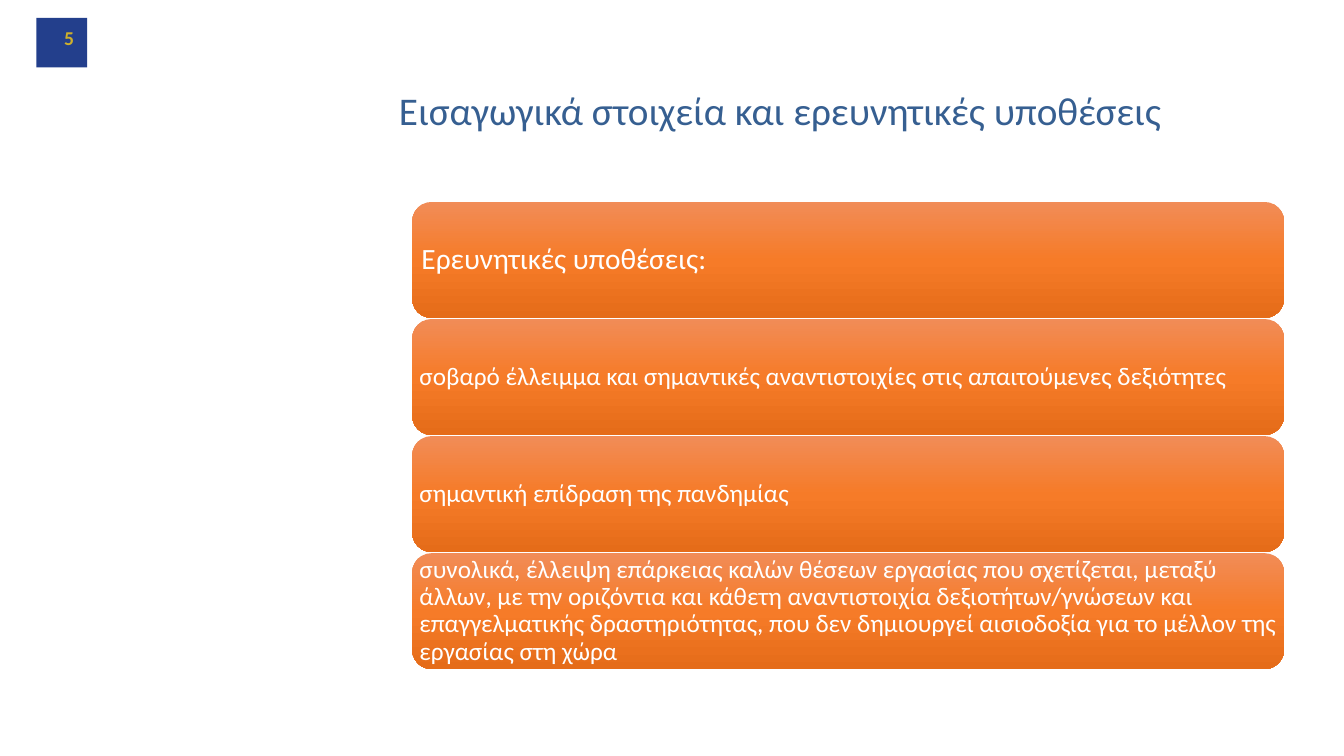
import copy
from dataclasses import dataclass

import pptx
import pptx.dml.color
import pptx.enum.shapes
import pptx.enum.text
import pptx.oxml.ns
import pptx.slide
import pptx.text.text
import pptx.util
from pptx.dml.color import RGBColor
from pptx.util import Cm

FONT = "Calibri"
WHITE = RGBColor(0xFF, 0xFF, 0xFF)
TITLE_BLUE = RGBColor(0x36, 0x5F, 0x91)
BADGE_BLUE = RGBColor(0x23, 0x3F, 0x8C)
BADGE_GOLD = RGBColor(0xCE, 0xB0, 0x2C)
ORANGE_LIGHT = RGBColor(0xF1, 0x8C, 0x57)
ORANGE_MIDDLE = RGBColor(0xF6, 0x7B, 0x28)
ORANGE_DARK = RGBColor(0xE5, 0x6C, 0x19)

CARD_LEFT, CARD_TOP = 10.39, 5.09
CARD_WIDTH, CARD_HEIGHT, CARD_PITCH = 21.97, 2.92, 2.95


@dataclass
class Card:
    text: str
    size: int = 18
    margin: float = 0.04


CARDS = [
    Card("Ερευνητικές υποθέσεις:", 21, 0.09),
    Card("σοβαρό έλλειμμα και σημαντικές αναντιστοιχίες στις απαιτούμενες δεξιότητες"),
    Card("σημαντική επίδραση της πανδημίας"),
    Card(
        "συνολικά, έλλειψη επάρκειας καλών θέσεων εργασίας που σχετίζεται, μεταξύ άλλων, "
        "με την οριζόντια και κάθετη αναντιστοιχία δεξιοτήτων/γνώσεων και επαγγελματικής "
        "δραστηριότητας, που δεν δημιουργεί αισιοδοξία για το μέλλον της εργασίας στη χώρα"
    ),
]


def write_text(
    frame: pptx.text.text.TextFrame,
    text: str,
    size: int,
    color: RGBColor,
    alignment: pptx.enum.text.PP_ALIGN = pptx.enum.text.PP_ALIGN.LEFT,
    bold: bool = False,
) -> None:
    frame.text = text
    frame.word_wrap = True
    frame.auto_size = pptx.enum.text.MSO_AUTO_SIZE.NONE
    frame.vertical_anchor = pptx.enum.text.MSO_ANCHOR.MIDDLE
    paragraph = frame.paragraphs[0]
    paragraph.alignment = alignment
    paragraph.line_spacing = 0.9
    paragraph.font.name = FONT
    paragraph.font.size = pptx.util.Pt(size)
    paragraph.font.bold = bold
    paragraph.font.color.rgb = color


def fill_orange(shape: pptx.shapes.autoshape.Shape) -> None:
    """Apply a top-to-bottom gradient of three orange stops."""
    shape.fill.gradient()
    shape.fill.gradient_angle = 270
    stop_list = shape.element.spPr.find(".//" + pptx.oxml.ns.qn("a:gsLst"))
    stop_list.insert(1, copy.deepcopy(stop_list[0]))
    colors = (ORANGE_LIGHT, ORANGE_MIDDLE, ORANGE_DARK)
    for index, (stop, color) in enumerate(zip(shape.fill.gradient_stops, colors)):
        stop.position = index / 2
        stop.color.rgb = color


def add_title(slide: pptx.slide.Slide) -> None:
    title = slide.shapes.title
    title.left, title.top = Cm(9.8), Cm(0.99)
    title.width, title.height = Cm(22.28), Cm(3.68)
    write_text(title.text_frame, "Εισαγωγικά στοιχεία και ερευνητικές υποθέσεις", 28, TITLE_BLUE)


def add_number_badge(slide: pptx.slide.Slide) -> None:
    badge = slide.shapes.add_shape(
        pptx.enum.shapes.MSO_SHAPE.RECTANGLE, Cm(0.92), Cm(0.45), Cm(1.28), Cm(1.25)
    )
    badge.shadow.inherit = False
    badge.fill.solid()
    badge.fill.fore_color.rgb = BADGE_BLUE
    badge.line.fill.background()
    frame = badge.text_frame
    frame.margin_left = frame.margin_top = 0
    frame.margin_right, frame.margin_bottom = Cm(0.33), Cm(0.18)
    write_text(frame, "5", 14, BADGE_GOLD, pptx.enum.text.PP_ALIGN.RIGHT, bold=True)


def add_card(slide: pptx.slide.Slide, card: Card, top: float) -> None:
    shape = slide.shapes.add_shape(
        pptx.enum.shapes.MSO_SHAPE.ROUNDED_RECTANGLE,
        Cm(CARD_LEFT), Cm(top), Cm(CARD_WIDTH), Cm(CARD_HEIGHT),
    )
    shape.shadow.inherit = False
    shape.line.fill.background()
    fill_orange(shape)
    frame = shape.text_frame
    frame.margin_left = frame.margin_right = Cm(card.margin)
    frame.margin_top = frame.margin_bottom = Cm(card.margin)
    write_text(frame, card.text, card.size, WHITE)


def main() -> None:
    presentation = pptx.Presentation()
    presentation.slide_width, presentation.slide_height = Cm(33.87), Cm(19.05)
    slide = presentation.slides.add_slide(presentation.slide_layouts.get_by_name("Title Only"))
    add_title(slide)
    add_number_badge(slide)
    for index, card in enumerate(CARDS):
        add_card(slide, card, CARD_TOP + index * CARD_PITCH)
    presentation.save("out.pptx")


if __name__ == "__main__":
    main()
